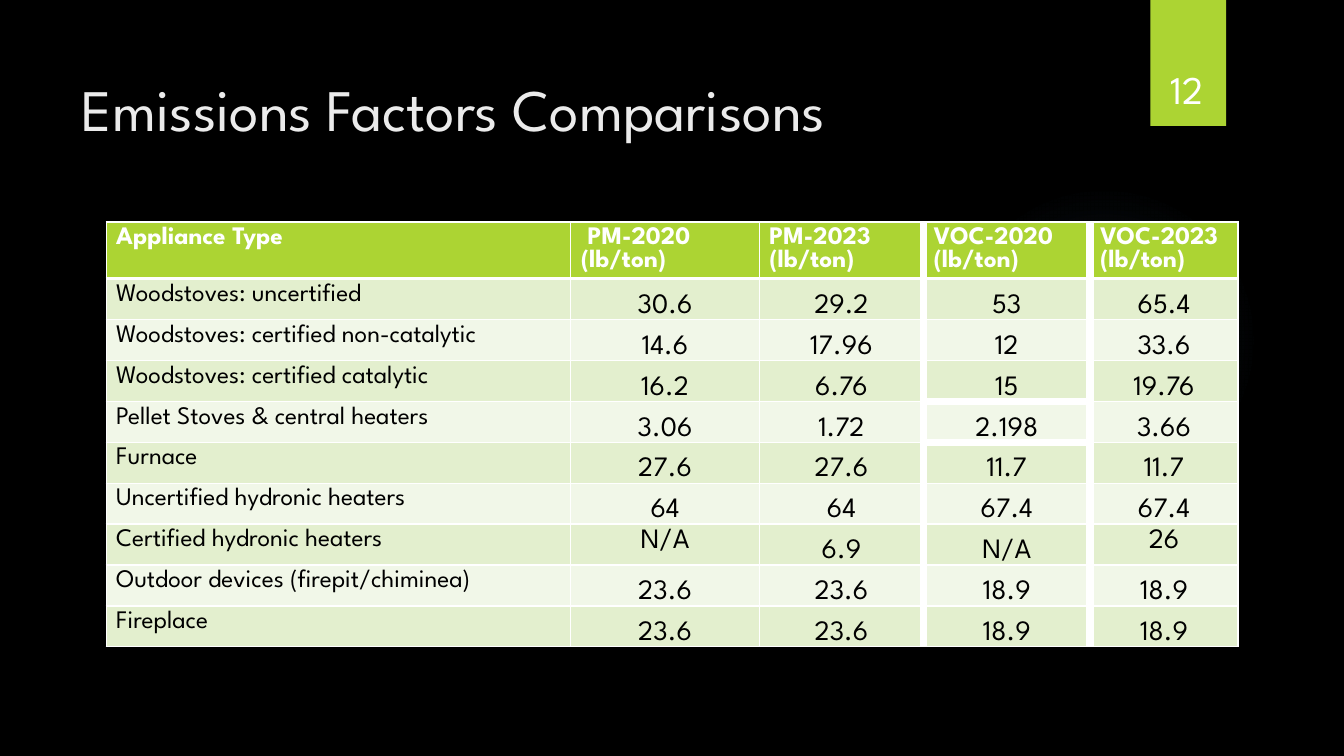
"""Build the emissions factors comparison slide."""
from lxml import etree
from pptx import Presentation
from pptx.dml.color import RGBColor
from pptx.enum.shapes import MSO_SHAPE
from pptx.enum.text import MSO_ANCHOR, PP_ALIGN
from pptx.oxml import parse_xml
from pptx.oxml.ns import qn
from pptx.util import Pt

RECT, OVAL = MSO_SHAPE.RECTANGLE, MSO_SHAPE.OVAL
TOP, BOTTOM = MSO_ANCHOR.TOP, MSO_ANCHOR.BOTTOM
LEFT, CENTER = PP_ALIGN.LEFT, PP_ALIGN.CENTER
A_NS = "http://schemas.openxmlformats.org/drawingml/2006/main"

TITLE = "Emissions Factors Comparisons"
PAGE = "12"
HEADER = ("Appliance Type", " PM-2020 (lb/ton)", "PM-2023 (lb/ton)",
          "VOC-2020 (lb/ton)", "VOC-2023 (lb/ton)")
FACTORS = [
    ("Woodstoves: uncertified", "30.6", "29.2", "53", "65.4"),
    ("Woodstoves: certified non-catalytic", "14.6", "17.96", "12", "33.6"),
    ("Woodstoves: certified catalytic", "16.2", "6.76", "15", "19.76"),
    ("Pellet Stoves & central heaters", "3.06", "1.72", "2.198", "3.66"),
    ("Furnace", "27.6", "27.6", "11.7", "11.7"),
    ("Uncertified hydronic heaters", "64", "64", "67.4", "67.4"),
    ("Certified hydronic heaters", "N/A", "6.9", "N/A", "26"),
    ("Outdoor devices (firepit/chiminea)", "23.6", "23.6", "18.9", "18.9"),
    ("Fireplace", "23.6", "23.6", "18.9", "18.9"),
]
TOP_VALUES = {(7, 1), (7, 4)}
COL_WIDTHS = (332, 134.6, 117.4, 118.8, 105.8)
HEADER_HEIGHT, ROW_HEIGHT = 40, 29.25
WIDE_COL_EDGES = (3, 4)
WIDE_ROW_EDGES, WIDE_ROW_COL = (4, 5), 3

THEME = {
    "font": "League Spartan",
    "background": "000000", "title": "EBEBEB", "accent": "ACD433",
    "white": "FFFFFF", "text": "000000", "glow": "7AC4F0",
    "bands": ("E3EFCE", "F1F7E8"),
    "title_size": 42, "page_size": 28, "label_size": 18, "value_size": 20,
}
GLOW_STOPS = ((0, 7), (36, 6), (69, 0))


def style(p, size, color, bold=False, align=LEFT):
    p.alignment = align
    p.font.name = THEME["font"]
    p.font.size = Pt(size)
    p.font.bold = bold
    p.font.color.rgb = RGBColor.from_string(color)


def add_panel(slide, shape, box, color):
    sp = slide.shapes.add_shape(shape, *map(Pt, box))
    sp.shadow.inherit = False
    sp.line.fill.background()
    sp.fill.solid()
    sp.fill.fore_color.rgb = RGBColor.from_string(color)
    return sp


def add_glow(slide):
    sp = add_panel(slide, OVAL, (677.5, 131.8, 221.8, 221.8), THEME["glow"])
    stops = "".join(
        f'<a:gs pos="{pos * 1000}"><a:srgbClr val="{THEME["glow"]}">'
        f'<a:alpha val="{alpha * 1000}"/></a:srgbClr></a:gs>'
        for pos, alpha in GLOW_STOPS)
    gradient = parse_xml(
        f'<a:gradFill xmlns:a="{A_NS}"><a:gsLst>{stops}</a:gsLst>'
        '<a:path path="circle"><a:fillToRect l="50000" t="50000" '
        'r="50000" b="50000"/></a:path></a:gradFill>')
    pr = sp._element.spPr
    pr.replace(pr.find(qn("a:solidFill")), gradient)


def add_title(slide):
    sp = slide.shapes.title
    sp.left, sp.top, sp.width, sp.height = map(Pt, (51, 36, 741, 110))
    tf = sp.text_frame
    tf.vertical_anchor = TOP
    tf.margin_top = Pt(16)
    tf.text = TITLE
    style(tf.paragraphs[0], THEME["title_size"], THEME["title"])


def add_page_number(slide):
    sp = slide.shapes.add_textbox(*map(Pt, (815, 23, 66.2, 60.5)))
    tf = sp.text_frame
    tf.word_wrap = True
    tf.vertical_anchor = BOTTOM
    tf.text = PAGE
    style(tf.paragraphs[0], THEME["page_size"], THEME["white"], align=CENTER)


def column_edge(edge):
    return 6 if edge in WIDE_COL_EDGES else 1


def row_edge(edge, col):
    if edge == 1:
        return 3
    return 6 if col == WIDE_ROW_COL and edge in WIDE_ROW_EDGES else 1


def set_borders(cell, row, col):
    widths = {"lnL": column_edge(col), "lnR": column_edge(col + 1),
              "lnT": row_edge(row, col), "lnB": row_edge(row + 1, col)}
    pr = cell._tc.get_or_add_tcPr()
    for tag, width in widths.items():
        ln = etree.SubElement(pr, qn(f"a:{tag}"), w=str(Pt(width)))
        fill = etree.SubElement(ln, qn("a:solidFill"))
        etree.SubElement(fill, qn("a:srgbClr"), val=THEME["white"])


def fill_cell(cell, text, row, col):
    set_borders(cell, row, col)
    cell.text = text
    p = cell.text_frame.paragraphs[0]
    if row == 0:
        color = THEME["accent"]
        style(p, THEME["label_size"], THEME["white"], bold=True)
    else:
        color = THEME["bands"][(row - 1) % 2]
        if col == 0:
            style(p, THEME["label_size"], THEME["text"])
        else:
            style(p, THEME["value_size"], THEME["text"], align=CENTER)
            if (row, col) not in TOP_VALUES:
                cell.vertical_anchor = BOTTOM
                cell.margin_left = cell.margin_right = cell.margin_top = Pt(0.7)
                cell.margin_bottom = 0
    cell.fill.solid()
    cell.fill.fore_color.rgb = RGBColor.from_string(color)


def add_factor_table(slide):
    rows = [HEADER] + FACTORS
    heights = [HEADER_HEIGHT] + [ROW_HEIGHT] * len(FACTORS)
    box = (75.8, 158.6, sum(COL_WIDTHS), sum(heights))
    table = slide.shapes.add_table(len(rows), len(HEADER), *map(Pt, box)).table
    for column, width in zip(table.columns, COL_WIDTHS):
        column.width = Pt(width)
    for r, (values, height) in enumerate(zip(rows, heights)):
        table.rows[r].height = Pt(height)
        for c, text in enumerate(values):
            fill_cell(table.cell(r, c), text, r, c)


def main():
    prs = Presentation()
    prs.slide_width, prs.slide_height = Pt(960), Pt(540)
    slide = prs.slides.add_slide(prs.slide_layouts[5])
    background = slide.background.fill
    background.solid()
    background.fore_color.rgb = RGBColor.from_string(THEME["background"])
    add_glow(slide)
    add_panel(slide, RECT, (821.8, 0, 54, 90), THEME["accent"])
    add_title(slide)
    add_factor_table(slide)
    add_page_number(slide)
    prs.save("out.pptx")


if __name__ == "__main__":
    main()
